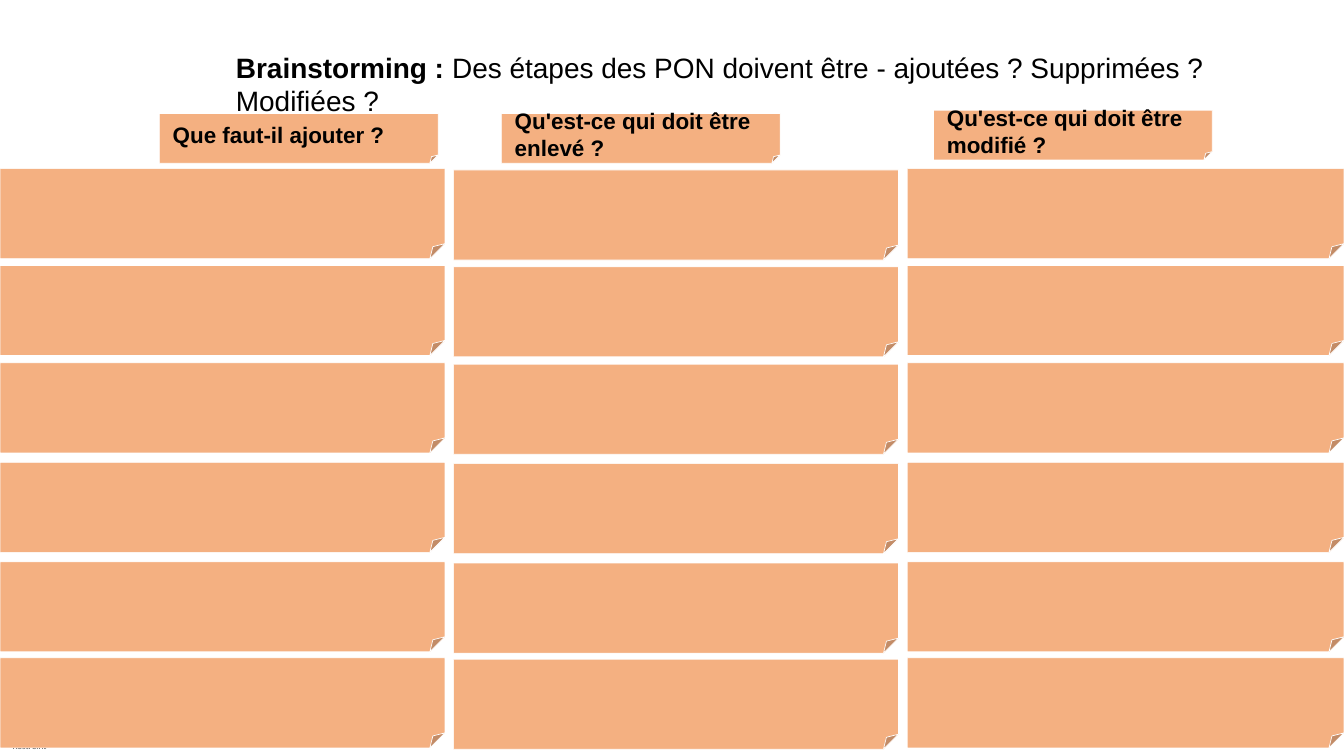
"""Build a brainstorming board with three columns of sticky notes."""

from dataclasses import dataclass

from pptx import Presentation
from pptx import util as u
from pptx.dml.color import RGBColor
from pptx.enum import shapes, text


@dataclass(frozen=True)
class Theme:
    """Colours, fonts and type sizes of the board."""

    note: RGBColor = RGBColor.from_string("F4B081")
    edge: RGBColor = RGBColor.from_string("FFFFFF")
    ink: RGBColor = RGBColor.from_string("000000")
    font: str = "Arial"
    label_font: str = "Calibri"
    title_size: int = 30
    heading_size: int = 24
    label_size: int = 10


@dataclass(frozen=True)
class Box:
    """Position and size in inches."""

    left: float
    top: float
    width: float
    height: float

    def lengths(self) -> tuple:
        """Return the four values as lengths."""
        return tuple(u.Inches(value) for value in (self.left, self.top, self.width, self.height))


@dataclass(frozen=True)
class Column:
    """One question with its stack of notes."""

    question: str
    heading: Box
    left: float
    width: float
    drop: float = 0


THEME = Theme()
NOTE_HEIGHT = 1.34
ROW_TOPS = (2.51, 3.95, 5.4, 6.88, 8.36, 9.79)
COLUMNS = (
    Column("Que faut-il ajouter ?", Box(2.37, 1.69, 4.15, 0.74), 0, 6.62),
    Column("Qu'est-ce qui doit être enlevé ?", Box(7.46, 1.69, 4.15, 0.74), 6.75, 6.62, 0.02),
    Column("Qu'est-ce qui doit être modifié ?", Box(13.89, 1.64, 4.15, 0.74), 13.5, 6.5),
)


def set_values(target, values: dict) -> None:
    """Set every named attribute on the target."""
    for name, value in values.items():
        setattr(target, name, value)


def format_frame(frame, side: float, end: float, anchor, wrap: bool = True) -> None:
    """Set the insets, anchor and wrapping of a text frame."""
    set_values(frame, {
        "margin_left": u.Inches(side), "margin_right": u.Inches(side),
        "margin_top": u.Inches(end), "margin_bottom": u.Inches(end),
        "vertical_anchor": anchor, "word_wrap": wrap,
        "auto_size": text.MSO_AUTO_SIZE.NONE,
    })


def add_run(paragraph, words: str, size: int, bold: bool = False, font: str = THEME.font) -> None:
    """Append a formatted run to a paragraph."""
    run = paragraph.add_run()
    run.text = words
    set_values(run.font, {"name": font, "size": u.Pt(size), "bold": bold})
    run.font.color.rgb = THEME.ink


def add_note(slide, box: Box):
    """Draw one sticky note with a folded corner."""
    note = slide.shapes.add_shape(shapes.MSO_SHAPE.FOLDED_CORNER, *box.lengths())
    note.shadow.inherit = False
    note.fill.solid()
    note.fill.fore_color.rgb = THEME.note
    note.line.color.rgb = THEME.edge
    note.line.width = u.Pt(0.75)
    return note


def add_heading(slide, column: Column) -> None:
    """Draw the question note above a column."""
    frame = add_note(slide, column.heading).text_frame
    format_frame(frame, 0.2, 0.2, text.MSO_ANCHOR.MIDDLE)
    paragraph = frame.paragraphs[0]
    paragraph.alignment = text.PP_ALIGN.LEFT
    add_run(paragraph, column.question, THEME.heading_size, bold=True)


def add_title(slide) -> None:
    """Place and fill the title placeholder."""
    title = slide.shapes.title
    names = ("left", "top", "width", "height")
    set_values(title, dict(zip(names, Box(3.31, 0.65, 16.15, 1.27).lengths())))
    format_frame(title.text_frame, 0.2, 0.1, text.MSO_ANCHOR.TOP)
    paragraph = title.text_frame.paragraphs[0]
    paragraph.alignment = text.PP_ALIGN.LEFT
    add_run(paragraph, "Brainstorming :", THEME.title_size, bold=True)
    add_run(
        paragraph,
        " Des étapes des PON doivent être - ajoutées ? Supprimées ? Modifiées ?",
        THEME.title_size,
    )


def add_label(slide) -> None:
    """Write the classification label at the bottom left."""
    label = slide.shapes.add_textbox(*Box(0, 10.96, 0.88, 0.29).lengths())
    format_frame(label.text_frame, 0, 0, text.MSO_ANCHOR.MIDDLE, wrap=False)
    paragraph = label.text_frame.paragraphs[0]
    paragraph.alignment = text.PP_ALIGN.CENTER
    add_run(paragraph, "Restreint", THEME.label_size, font=THEME.label_font)


def main() -> None:
    """Build and save the presentation."""
    presentation = Presentation()
    presentation.slide_width = u.Inches(20)
    presentation.slide_height = u.Inches(11.25)
    slide = presentation.slides.add_slide(presentation.slide_layouts.get_by_name("Title Only"))
    add_label(slide)
    add_title(slide)
    for top in ROW_TOPS:
        for column in COLUMNS:
            add_note(slide, Box(column.left, top + column.drop, column.width, NOTE_HEIGHT))
    for column in reversed(COLUMNS):
        add_heading(slide, column)
    presentation.save("out.pptx")


if __name__ == "__main__":
    main()
